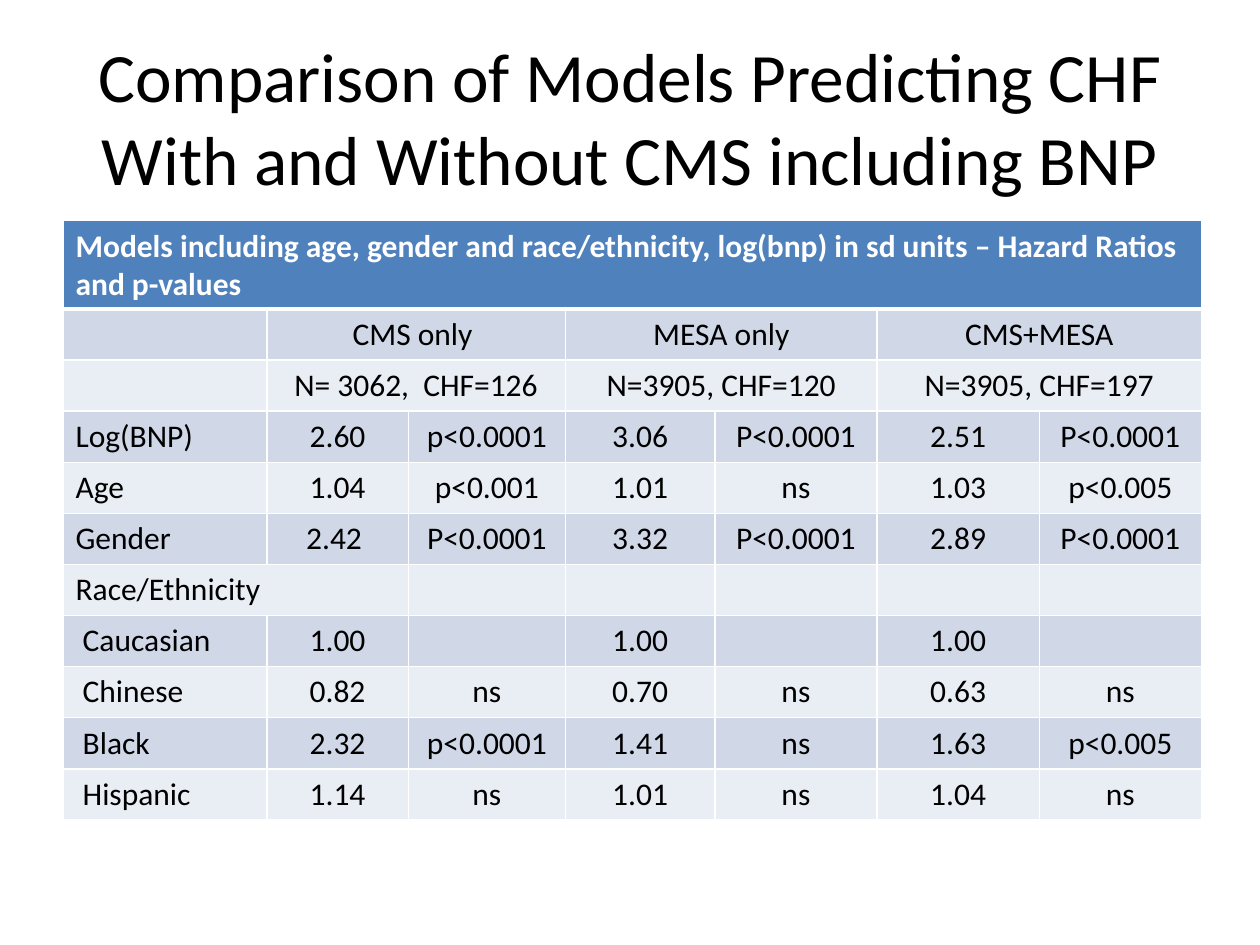
from dataclasses import dataclass

from lxml import etree
from pptx import Presentation
from pptx.dml.color import RGBColor
from pptx.enum.text import MSO_ANCHOR, PP_ALIGN
from pptx.oxml.ns import qn
from pptx.util import Cm, Pt

LEFT, CENTER = PP_ALIGN.LEFT, PP_ALIGN.CENTER
MIDDLE = MSO_ANCHOR.MIDDLE


@dataclass(frozen=True)
class Theme:
    font: str = "Calibri"
    title_size: float = 39.6
    table_size: float = 18
    text: str = "000000"
    header_text: str = "FFFFFF"
    header_fill: str = "4F81BD"
    bands: tuple = ("D0D8E8", "E9EDF4")
    border: str = "FFFFFF"
    thin: float = 1
    thick: float = 3


THEME = Theme()

TITLE_LINES = ["Comparison of Models Predicting CHF", "With and Without CMS including BNP"]

# None marks a cell that is covered by the merged cell to its left
ROWS = [
    ["Models including age, gender and race/ethnicity, log(bnp) in sd units"
     " – Hazard Ratios and p-values"] + [None] * 6,
    ["", "CMS only ", None, "MESA only", None, "CMS+MESA", None],
    ["", "N= 3062,  CHF=126", None, "N=3905, CHF=120", None, "N=3905, CHF=197", None],
    ["Log(BNP)", "2.60", "p<0.0001", "3.06", "P<0.0001", "2.51", "P<0.0001"],
    ["Age", "1.04", "p<0.001", "1.01", "ns", "1.03", "p<0.005"],
    ["Gender", "2.42 ", "P<0.0001", "3.32", "P<0.0001", "2.89", "P<0.0001"],
    ["Race/Ethnicity", None, "", "", "", "", ""],
    [" Caucasian", "1.00", "", "1.00", "", "1.00", ""],
    [" Chinese", "0.82", "ns", "0.70", "ns", "0.63", "ns"],
    [" Black", "2.32", "p<0.0001", "1.41", "ns", "1.63", "p<0.005"],
    [" Hispanic", "1.14", "ns", "1.01", "ns", "1.04", "ns"],
]
COLUMN_WIDTHS = [4.11, 2.85, 3.17, 3.01, 3.27, 3.27, 3.27]
HEADER_HEIGHT, ROW_HEIGHT = 1.76, 1.03


def add_run(paragraph, text, size, color, bold=False):
    run = paragraph.add_run()
    run.text = text
    run.font.name = THEME.font
    run.font.size = Pt(size)
    run.font.bold = bold
    run.font.color.rgb = RGBColor.from_string(color)


def add_title(slide, left, top, width, height):
    frame = slide.shapes.add_textbox(Cm(left), Cm(top), Cm(width), Cm(height)).text_frame
    frame.word_wrap = True
    frame.vertical_anchor = MIDDLE
    paragraph = frame.paragraphs[0]
    paragraph.alignment = CENTER
    for index, line in enumerate(TITLE_LINES):
        if index:
            paragraph.add_line_break()
        add_run(paragraph, line, THEME.title_size, THEME.text)


def set_borders(cell, row_index):
    """Draw all four cell borders; the rule below the header is thicker."""
    properties = cell._tc.get_or_add_tcPr()
    thick_side = {0: "lnB", 1: "lnT"}.get(row_index)
    for side in ("lnL", "lnR", "lnT", "lnB"):
        width = THEME.thick if side == thick_side else THEME.thin
        line = etree.SubElement(properties, qn(f"a:{side}"), w=str(Pt(width)))
        fill = etree.SubElement(line, qn("a:solidFill"))
        etree.SubElement(fill, qn("a:srgbClr"), val=THEME.border)


def merge_row(table, row_index, texts):
    start = 0
    for end in range(1, len(texts) + 1):
        if end == len(texts) or texts[end] is not None:
            if end - start > 1:
                table.cell(row_index, start).merge(table.cell(row_index, end - 1))
            start = end


def add_model_table(slide, left, top):
    height = HEADER_HEIGHT + ROW_HEIGHT * (len(ROWS) - 1)
    table = slide.shapes.add_table(
        len(ROWS), len(COLUMN_WIDTHS),
        Cm(left), Cm(top), Cm(sum(COLUMN_WIDTHS)), Cm(height)).table
    for column, width in zip(table.columns, COLUMN_WIDTHS):
        column.width = Cm(width)

    for row_index, texts in enumerate(ROWS):
        is_header = row_index == 0
        table.rows[row_index].height = Cm(HEADER_HEIGHT if is_header else ROW_HEIGHT)
        fill = THEME.header_fill if is_header else THEME.bands[(row_index - 1) % 2]
        color = THEME.header_text if is_header else THEME.text
        for column_index, text in enumerate(texts):
            cell = table.cell(row_index, column_index)
            set_borders(cell, row_index)
            cell.fill.solid()
            cell.fill.fore_color.rgb = RGBColor.from_string(fill)
            if text:
                paragraph = cell.text_frame.paragraphs[0]
                paragraph.alignment = CENTER if column_index else LEFT
                add_run(paragraph, text, THEME.table_size, color, bold=is_header)
        merge_row(table, row_index, texts)


def main():
    presentation = Presentation()
    presentation.slide_width, presentation.slide_height = Cm(25.4), Cm(19.05)
    slide = presentation.slides.add_slide(presentation.slide_layouts[6])
    add_title(slide, left=1.27, top=0.76, width=22.86, height=3.18)
    add_model_table(slide, left=1.27, top=4.45)
    presentation.save("out.pptx")


if __name__ == "__main__":
    main()
